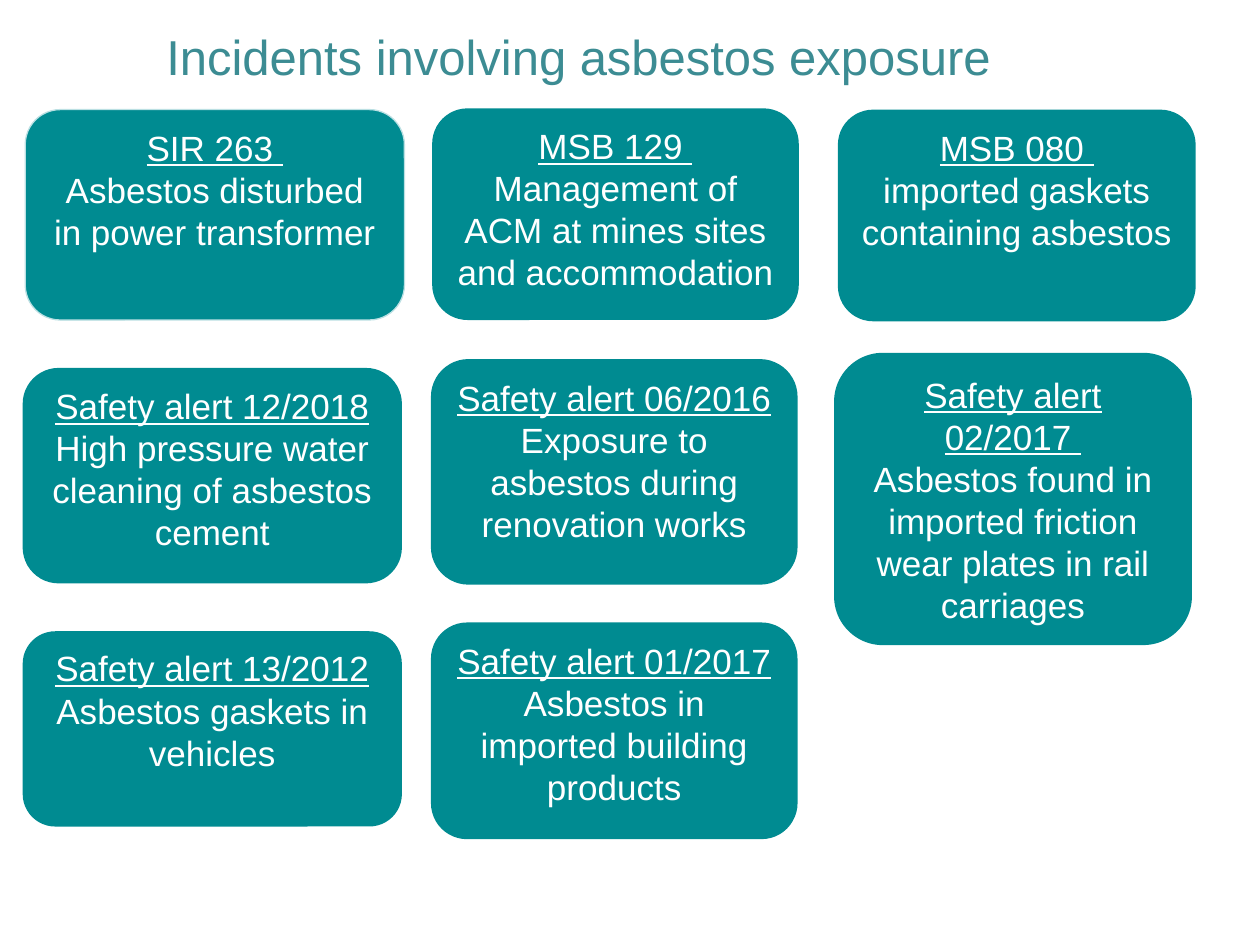
from dataclasses import dataclass

from pptx import Presentation
from pptx.dml.color import RGBColor
from pptx.enum.shapes import MSO_SHAPE
from pptx.enum.text import MSO_ANCHOR, MSO_AUTO_SIZE, PP_ALIGN
from pptx.slide import Slide
from pptx.text.text import _Paragraph
from pptx.util import Inches, Pt

TEAL = RGBColor(0x00, 0x8B, 0x91)
TITLE = RGBColor(0x3C, 0x8C, 0x93)
PALE = RGBColor(0xBB, 0xE0, 0xE3)
WHITE = RGBColor(0xFF, 0xFF, 0xFF)
FONT = "Arial"


@dataclass
class Card:
    left: float
    top: float
    width: float
    height: float
    head: str
    body: str
    split: bool = False
    edge: bool = False


LEFT, MID, RIGHT = 3.01, 2.91, 2.84

CARDS = [
    Card(3.42, 2.85, MID, 1.79, "Safety alert 06/2016 ",
         "Exposure to asbestos during renovation works"),
    Card(0.2, 0.87, LEFT, 1.67, "SIR 263 ",
         "Asbestos disturbed in power transformer", split=True, edge=True),
    Card(6.65, 0.87, RIGHT, 1.68, "MSB 080 ",
         "imported gaskets containing asbestos ", split=True),
    Card(6.62, 2.8, RIGHT, 2.32, "Safety alert 02/2017 ",
         "Asbestos found in imported friction wear plates in rail carriages",
         split=True),
    Card(3.43, 0.86, MID, 1.68, "MSB 129 ",
         "Management of ACM at mines sites and accommodation", split=True),
    Card(0.18, 2.92, LEFT, 1.71, "Safety alert 12/2018 ",
         "High pressure water cleaning of asbestos cement"),
    Card(0.18, 5.01, LEFT, 1.55, "Safety alert 13/2012 ",
         "Asbestos gaskets in vehicles"),
    Card(3.42, 4.94, MID, 1.72, "Safety alert 01/2017 ",
         "Asbestos in imported building products"),
]


def add_text(para: _Paragraph, text: str, size: int, color: RGBColor,
             under: bool = False) -> None:
    run = para.add_run()
    run.text = text
    run.font.name = FONT
    run.font.size = Pt(size)
    run.font.color.rgb = color
    run.font.underline = under


def add_title(slide: Slide, text: str) -> None:
    title = slide.shapes.title
    title.left, title.top = Inches(1.22), Inches(0.03)
    title.width, title.height = Inches(8.5), Inches(0.82)
    frame = title.text_frame
    frame.word_wrap = True
    frame.auto_size = MSO_AUTO_SIZE.NONE
    frame.vertical_anchor = MSO_ANCHOR.MIDDLE
    para = frame.paragraphs[0]
    para.alignment = PP_ALIGN.LEFT
    add_text(para, text, 28, TITLE)


def add_card(slide: Slide, card: Card) -> None:
    shape = slide.shapes.add_shape(
        MSO_SHAPE.ROUNDED_RECTANGLE, Inches(card.left), Inches(card.top),
        Inches(card.width), Inches(card.height))
    shape.shadow.inherit = False
    shape.fill.solid()
    shape.fill.fore_color.rgb = TEAL
    if card.edge:
        shape.line.color.rgb = PALE
        shape.line.width = Pt(0.75)
    else:
        shape.line.fill.background()
    frame = shape.text_frame
    frame.word_wrap = True
    frame.vertical_anchor = MSO_ANCHOR.TOP
    para = frame.paragraphs[0]
    para.alignment = PP_ALIGN.CENTER
    para.line_spacing = Pt(24)
    add_text(para, card.head, 20, WHITE, under=True)
    if card.split:
        para.add_line_break()
    add_text(para, card.body, 20, WHITE)


def main() -> None:
    deck = Presentation()
    deck.slide_width, deck.slide_height = Inches(10), Inches(7.5)
    slide = deck.slides.add_slide(deck.slide_layouts[5])
    add_title(slide, "Incidents involving asbestos exposure")
    for card in CARDS:
        add_card(slide, card)
    deck.save("out.pptx")


if __name__ == "__main__":
    main()
